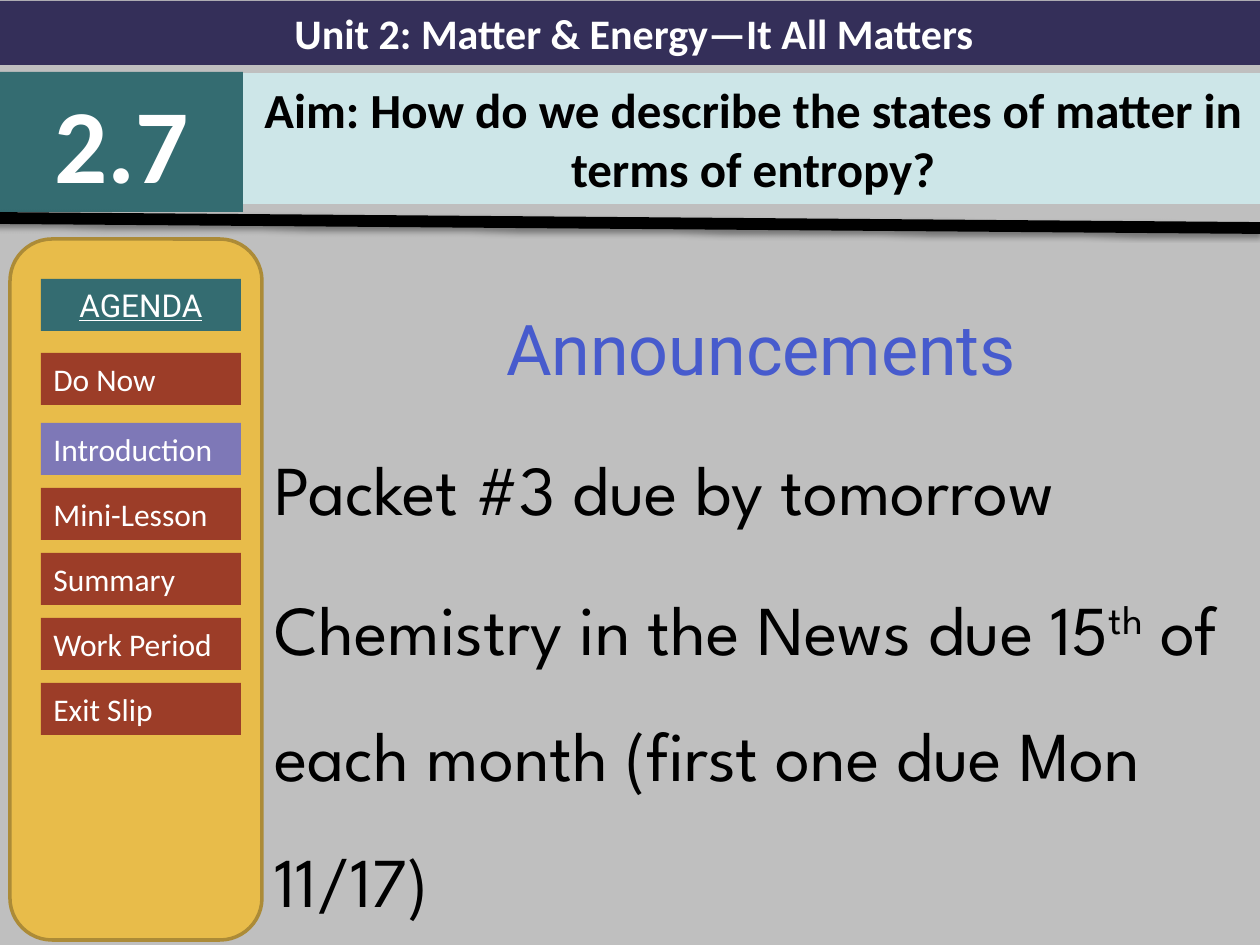
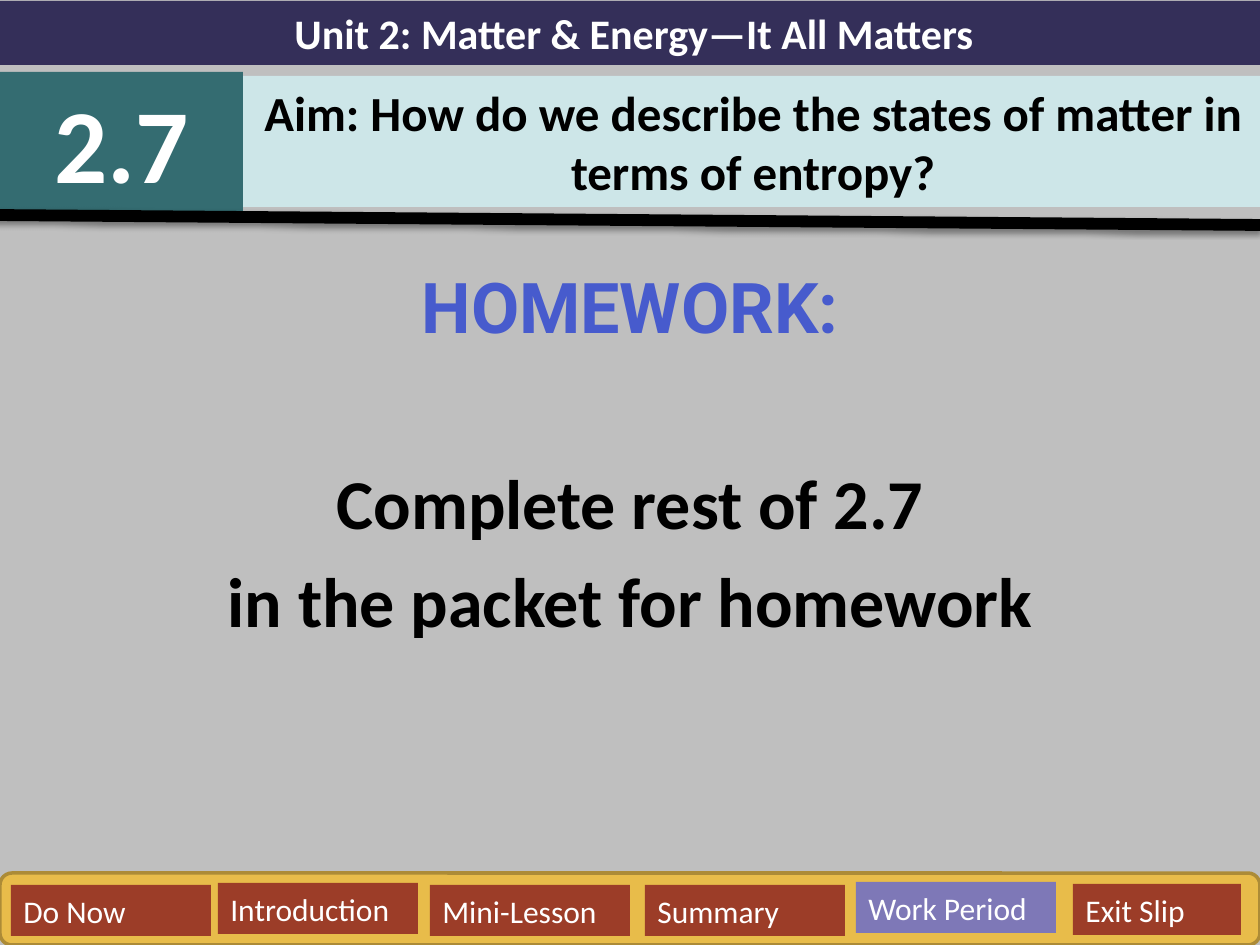
from dataclasses import dataclass
from typing import NamedTuple

from lxml import etree
from pptx import Presentation
from pptx import util as u
from pptx.dml.color import RGBColor
from pptx.enum import shapes, text
from pptx.oxml import parse_xml
from pptx.oxml.ns import nsdecls

PX = 914400 / 126
WIDTH, HEIGHT = 1260, 945

GREY, BLACK, WHITE = "BFBFBF", "000000", "FFFFFF"
PURPLE, TEAL, ICE = "342F59", "346C71", "CDE6E8"
GOLD, DARK_GOLD, RUST, LILAC, BLUE = "E8BC4A", "AC8B37", "9C3D28", "7E78B7", "475BCD"

LEFT, CENTER = text.PP_ALIGN.LEFT, text.PP_ALIGN.CENTER

BANNER_FONT = {"name": "Calibri", "size": u.Pt(24), "bold": True}
NUMBER_FONT = {"name": "Calibri", "size": u.Pt(60), "bold": True}
AIM_FONT = {"name": "Calibri", "size": u.Pt(28), "bold": True}
BUTTON_FONT = {"name": "Calibri", "size": u.Pt(18)}
AGENDA_FONT = {"name": "Roboto", "size": u.Pt(18), "underline": True}
HEADING_FONT = {"name": "Roboto", "size": u.Pt(40)}
NEWS_FONT = {"name": "League Spartan", "size": u.Pt(40)}
HOMEWORK_FONT = {"name": "Calibri", "size": u.Pt(40), "bold": True}

UNIT = "Unit 2: Matter & Energy—It All Matters"
LESSON = "2.7"
AIM = "Aim: How do we describe the states of matter in terms of entropy?"
STEPS = ("Do Now", "Introduction", "Mini-Lesson", "Summary", "Work Period", "Exit Slip")


class Area(NamedTuple):
    left: int
    top: int
    width: int
    height: int


class Span(NamedTuple):
    words: str
    raised: bool = False


@dataclass
class Line:
    """One paragraph of body text."""
    spans: list[Span]
    font: dict
    color: str = BLACK
    align: text.PP_ALIGN = CENTER
    before: int = 8
    spacing: float = 1.0


@dataclass
class Button:
    label: str
    area: Area


def px(length: float) -> u.Emu:
    return u.Emu(round(length * PX))


def rgb(color: str) -> RGBColor:
    return RGBColor.from_string(color)


def set_all(target, values: dict) -> None:
    for name, value in values.items():
        setattr(target, name, value)


def place(shape, area: Area) -> None:
    set_all(shape, {name: px(value) for name, value in area._asdict().items()})


def paint(shape, color: str) -> None:
    shape.fill.solid()
    shape.fill.fore_color.rgb = rgb(color)


def add_span(para, span: Span, font: dict, color: str) -> None:
    run = para.add_run()
    run.text = span.words
    set_all(run.font, font)
    run.font.color.rgb = rgb(color)
    if span.raised:
        run._r.get_or_add_rPr().set("baseline", "30000")


def write_label(shape, label: str, font: dict, color: str, align=CENTER) -> None:
    frame = shape.text_frame
    set_all(frame, {"word_wrap": True, "auto_size": text.MSO_AUTO_SIZE.NONE,
                    "vertical_anchor": text.MSO_ANCHOR.MIDDLE})
    para = frame.paragraphs[0]
    para.alignment = align
    add_span(para, Span(label), font, color)


def add_box(page, area: Area, fill: str, kind=shapes.MSO_SHAPE.RECTANGLE):
    box = page.shapes.add_shape(kind, *map(px, area))
    box.shadow.inherit = False
    paint(box, fill)
    box.line.fill.background()
    return box


def add_panel(page, area: Area) -> None:
    """Gold rounded panel that holds the agenda buttons."""
    panel = add_box(page, area, GOLD, shapes.MSO_SHAPE.ROUNDED_RECTANGLE)
    panel.line.color.rgb = rgb(DARK_GOLD)
    panel.line.width = u.Pt(2)


def add_rule(page, start: int, end: int) -> None:
    """Slightly sloping black rule with a soft shadow under the header."""
    rule = page.shapes.add_connector(
        shapes.MSO_CONNECTOR.STRAIGHT, px(-6), px(start), px(WIDTH), px(end))
    rule.line.color.rgb = rgb(BLACK)
    rule.line.width = u.Pt(6.75)
    effects = parse_xml(f"<a:effectLst {nsdecls('a')}/>")
    shadow = etree.SubElement(effects, effects.tag.replace("effectLst", "outerShdw"),
                              blurRad=str(u.Pt(3.1)), dist=str(u.Pt(1.6)),
                              dir="5400000", rotWithShape="0")
    color = etree.SubElement(shadow, effects.tag.replace("effectLst", "srgbClr"), val=BLACK)
    etree.SubElement(color, effects.tag.replace("effectLst", "alpha"), val="38000")
    rule._element.spPr.append(effects)


def add_buttons(page, buttons: list[Button], current: str) -> None:
    for button in buttons:
        box = add_box(page, button.area, LILAC if button.label == current else RUST)
        write_label(box, button.label, BUTTON_FONT, WHITE, LEFT)


def write_body(body, area: Area, lines: list[Line]) -> None:
    place(body, area)
    frame = body.text_frame
    set_all(frame, {"word_wrap": True, "auto_size": text.MSO_AUTO_SIZE.NONE,
                    "vertical_anchor": text.MSO_ANCHOR.TOP})
    for index, line in enumerate(lines):
        para = frame.add_paragraph() if index else frame.paragraphs[0]
        set_all(para, {"alignment": line.align, "line_spacing": line.spacing,
                       "space_before": u.Pt(line.before)})
        for span in line.spans:
            add_span(para, span, line.font, line.color)


def add_page(deck, aim_top: int, rule_start: int, rule_end: int,
             body_area: Area, lines: list[Line]):
    """Add a slide with the shared lesson header and its body text."""
    page = deck.slides.add_slide(deck.slide_layouts[0])
    write_body(page.placeholders[1], body_area, lines)
    aim = page.shapes.title
    place(aim, Area(243, aim_top, 1020, 131))
    paint(aim, ICE)
    write_label(aim, AIM, AIM_FONT, BLACK)
    banner = add_box(page, Area(0, 1, 1268, 64), PURPLE)
    write_label(banner, UNIT, BANNER_FONT, WHITE)
    number = add_box(page, Area(0, 72, 243, 140), TEAL)
    write_label(number, LESSON, NUMBER_FONT, WHITE)
    add_rule(page, rule_start, rule_end)
    return page


def add_announcements(deck) -> None:
    news = {"font": NEWS_FONT, "align": LEFT, "spacing": 1.5}
    lines = [
        Line([Span("Announcements")], HEADING_FONT, BLUE, spacing=1.5),
        Line([Span("Packet #3 due by tomorrow")], **news),
        Line([Span("Chemistry in the News due 15"), Span("th", raised=True),
              Span(" of each month (first one due Mon 11/17)")], **news),
    ]
    page = add_page(deck, 73, 218, 228, Area(262, 257, 998, 688), lines)
    add_panel(page, Area(10, 239, 252, 701))
    agenda = add_box(page, Area(41, 279, 200, 52), TEAL)
    write_label(agenda, "AGENDA", AGENDA_FONT, WHITE)
    tops = [353, *(423 + 65 * row for row in range(len(STEPS) - 1))]
    add_buttons(page, [Button(step, Area(41, top, 200, 52))
                       for step, top in zip(STEPS, tops)], "Introduction")


def add_homework(deck) -> None:
    lines = [
        Line([Span("HOMEWORK:")], {**HEADING_FONT, "bold": True}, BLUE),
        Line([Span("Complete rest of 2.7")], HOMEWORK_FONT, before=64),
        Line([Span("in the packet for homework")], HOMEWORK_FONT),
    ]
    page = add_page(deck, 76, 215, 225, Area(0, 257, WIDTH, 688), lines)
    add_panel(page, Area(0, 873, WIDTH, 72))
    areas = [Area(11, 885, 200, 51), Area(218, 883, 200, 51), Area(430, 885, 200, 51),
             Area(645, 885, 200, 51), Area(856, 882, 200, 51), Area(1073, 884, 168, 51)]
    add_buttons(page, [Button(*pair) for pair in zip(STEPS, areas)], "Work Period")


def main() -> None:
    deck = Presentation()
    deck.slide_width, deck.slide_height = px(WIDTH), px(HEIGHT)
    paint(deck.slide_master.background, GREY)
    add_announcements(deck)
    add_homework(deck)
    deck.save("out.pptx")


if __name__ == "__main__":
    main()
